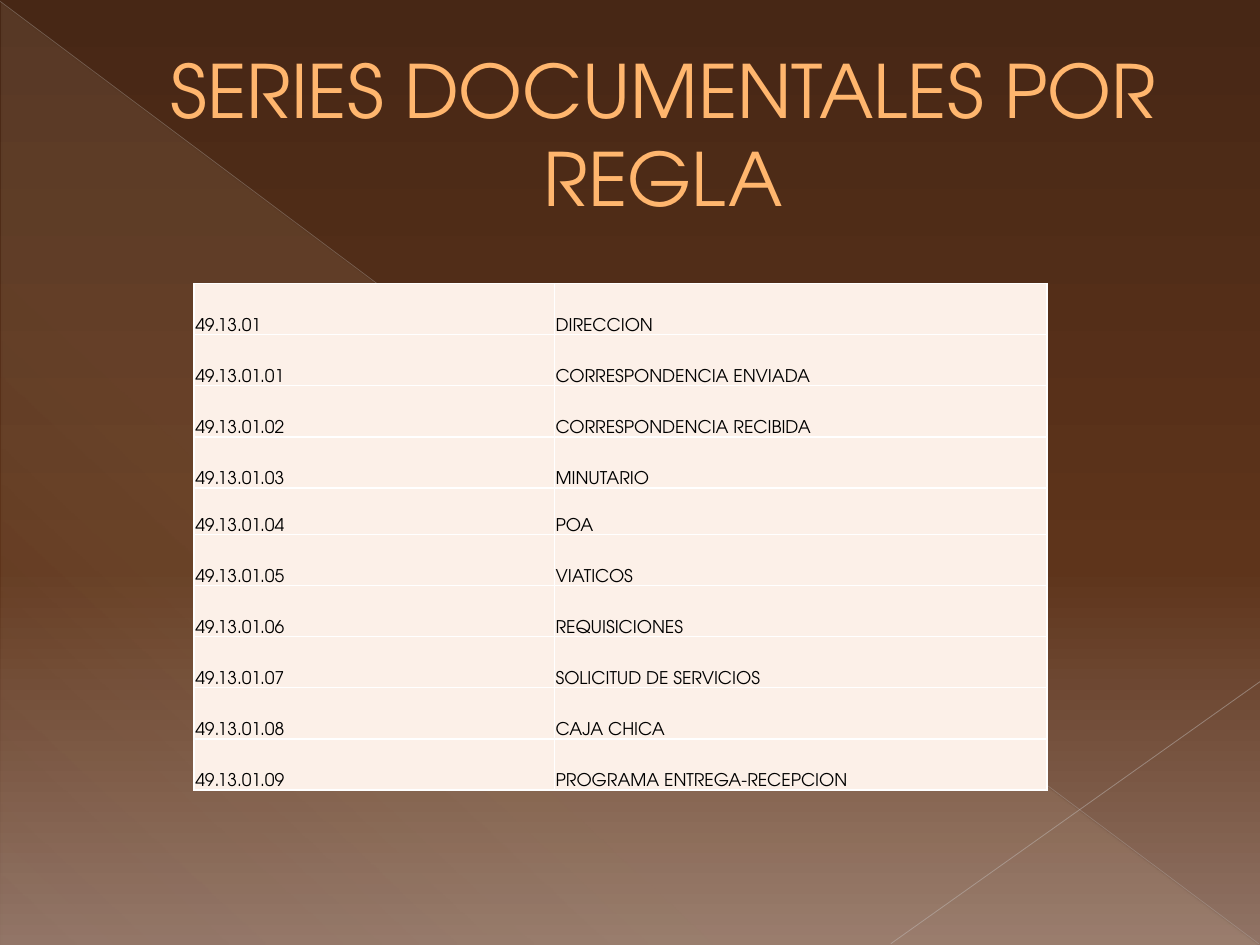
from lxml import etree
from pptx import Presentation
from pptx.dml.color import RGBColor
from pptx.enum.shapes import MSO_CONNECTOR, MSO_SHAPE
from pptx.enum.text import MSO_ANCHOR, PP_ALIGN
from pptx.oxml.ns import qn
from pptx.util import Inches, Pt

STRAIGHT = MSO_CONNECTOR.STRAIGHT
RIGHT_TRIANGLE = MSO_SHAPE.RIGHT_TRIANGLE
MIDDLE, BOTTOM = MSO_ANCHOR.MIDDLE, MSO_ANCHOR.BOTTOM
CENTER = PP_ALIGN.CENTER

FONT = "TeX Gyre Adventor"
DARK_BROWN = RGBColor(0x47, 0x27, 0x15)
BROWN = RGBColor(0x5E, 0x34, 0x1B)
MAUVE = RGBColor(0x90, 0x73, 0x65)
CREAM = RGBColor(0xFB, 0xEE, 0xC9)
LONG_LINE = RGBColor(0xBC, 0xB7, 0xB4)
SHORT_LINE = RGBColor(0xC4, 0xBF, 0xBD)
ORANGE = RGBColor(0xFF, 0xB6, 0x6E)
TITLE_OUTLINE = RGBColor(0xA6, 0x70, 0x20)
CELL_FILL = RGBColor(0xFC, 0xF0, 0xE8)
BLACK = RGBColor(0, 0, 0)
WHITE = RGBColor(0xFF, 0xFF, 0xFF)

SERIES = [
    ("49.13.01", "DIRECCION"),
    ("49.13.01.01", "CORRESPONDENCIA ENVIADA"),
    ("49.13.01.02", "CORRESPONDENCIA RECIBIDA"),
    ("49.13.01.03", "MINUTARIO"),
    ("49.13.01.04", "POA"),
    ("49.13.01.05", "VIATICOS"),
    ("49.13.01.06", "REQUISICIONES"),
    ("49.13.01.07", "SOLICITUD DE SERVICIOS"),
    ("49.13.01.08", "CAJA CHICA"),
    ("49.13.01.09", "PROGRAMA ENTREGA-RECEPCION"),
]
COLUMN_WIDTHS = (2.86, 3.91)
SHORT_ROW, SHORT_ROW_HEIGHT = 4, 0.37


def add_color(parent, color, opacity=100):
    element = etree.SubElement(parent, qn("a:srgbClr"), val=str(color))
    if opacity < 100:
        etree.SubElement(element, qn("a:alpha"), val=str(opacity * 1000))


def set_gradient(fill, fill_parent, stops, angle):
    """Fill with (position, colour, opacity) stops; angle runs clockwise."""
    fill.gradient()
    gradient = fill_parent.find(qn("a:gradFill"))
    stop_list = gradient.find(qn("a:gsLst"))
    for stop in list(stop_list):
        stop_list.remove(stop)
    for position, color, opacity in stops:
        stop = etree.SubElement(stop_list, qn("a:gs"), pos=str(position * 1000))
        add_color(stop, color, opacity)
    linear = gradient.find(qn("a:lin"))
    linear.set("ang", str(angle * 60000))
    linear.set("scaled", "0")


def make_line(tag, color, width):
    line = etree.Element(qn(tag), w=str(Pt(width)))
    add_color(etree.SubElement(line, qn("a:solidFill")), color)
    return line


def add_thin_line(slide, start, end, color, width, opacity):
    x1, y1, x2, y2 = (Inches(value) for value in start + end)
    connector = slide.shapes.add_connector(STRAIGHT, x1, y1, x2, y2)
    connector.line.width = Pt(width)
    connector.line.color.rgb = color
    properties = connector._element.spPr
    color_element = properties.find(".//" + qn("a:srgbClr"))
    etree.SubElement(color_element, qn("a:alpha"), val=str(opacity * 1000))
    etree.SubElement(properties, qn("a:effectLst"))


def add_backdrop(slide, left, top, width, height):
    fill = slide.background.fill
    background = slide._element.cSld.find(qn("p:bg")).find(qn("p:bgPr"))
    stops = [(0, DARK_BROWN, 100), (60, BROWN, 100), (100, MAUVE, 100)]
    set_gradient(fill, background, stops, 90)

    triangle = slide.shapes.add_shape(
        RIGHT_TRIANGLE, Inches(left), Inches(top), Inches(width), Inches(height))
    triangle.shadow.inherit = False
    triangle.line.fill.background()
    stops = [(0, CREAM, 10), (70, CREAM, 8), (100, CREAM, 1)]
    set_gradient(triangle.fill, triangle._element.spPr, stops, 133)

    right, bottom = left + width, top + height - 0.01
    add_thin_line(slide, (0, 0.01), (right, bottom), LONG_LINE, 0.39, 35)
    add_thin_line(slide, (10, 5.41), (7.07, bottom), SHORT_LINE, 0.47, 45)


def add_title(slide, left, top, width, height):
    box = slide.shapes.add_textbox(
        Inches(left), Inches(top), Inches(width), Inches(height))
    frame = box.text_frame
    frame.word_wrap = True
    frame.vertical_anchor = MIDDLE
    paragraph = frame.paragraphs[0]
    paragraph.alignment = CENTER
    paragraph._p.get_or_add_pPr().set("marL", str(Inches(0.53)))
    paragraph.font.name = FONT
    paragraph.font.size = Pt(42)
    paragraph.font.color.rgb = ORANGE
    run = paragraph.add_run()
    run.text = "SERIES DOCUMENTALES POR REGLA"
    run._r.get_or_add_rPr().insert(0, make_line("a:ln", TITLE_OUTLINE, 0.5))


def format_cell(cell, text):
    cell.margin_left = cell.margin_right = cell.margin_top = Inches(0.01)
    cell.margin_bottom = 0
    cell.vertical_anchor = BOTTOM
    cell.text = text
    font = cell.text_frame.paragraphs[0].font
    font.name = FONT
    font.size = Pt(10)
    font.color.rgb = BLACK
    properties = cell._tc.get_or_add_tcPr()
    for tag in ("a:lnL", "a:lnR", "a:lnT", "a:lnB"):
        properties.append(make_line(tag, WHITE, 1))
    cell.fill.solid()
    cell.fill.fore_color.rgb = CELL_FILL


def add_series_table(slide, left, top, width, height):
    table = slide.shapes.add_table(
        len(SERIES), len(COLUMN_WIDTHS),
        Inches(left), Inches(top), Inches(width), Inches(height)).table
    table.first_row = False
    table.horz_banding = False
    for column, column_width in zip(table.columns, COLUMN_WIDTHS):
        column.width = Inches(column_width)
    row_height = (height - SHORT_ROW_HEIGHT) / (len(SERIES) - 1)
    for index, (row, texts) in enumerate(zip(table.rows, SERIES)):
        row.height = Inches(SHORT_ROW_HEIGHT if index == SHORT_ROW else row_height)
        for cell, text in zip(row.cells, texts):
            format_cell(cell, text)


def main():
    presentation = Presentation()
    presentation.slide_width = Inches(10)
    presentation.slide_height = Inches(7.5)
    slide = presentation.slides.add_slide(presentation.slide_layouts[6])
    add_backdrop(slide, 0.01, 0.02, 9.98, 7.48)
    add_title(slide, 0.5, 0.29, 9, 1.53)
    add_series_table(slide, 1.54, 2.25, 6.77, 4.02)
    presentation.save("out.pptx")


if __name__ == "__main__":
    main()
